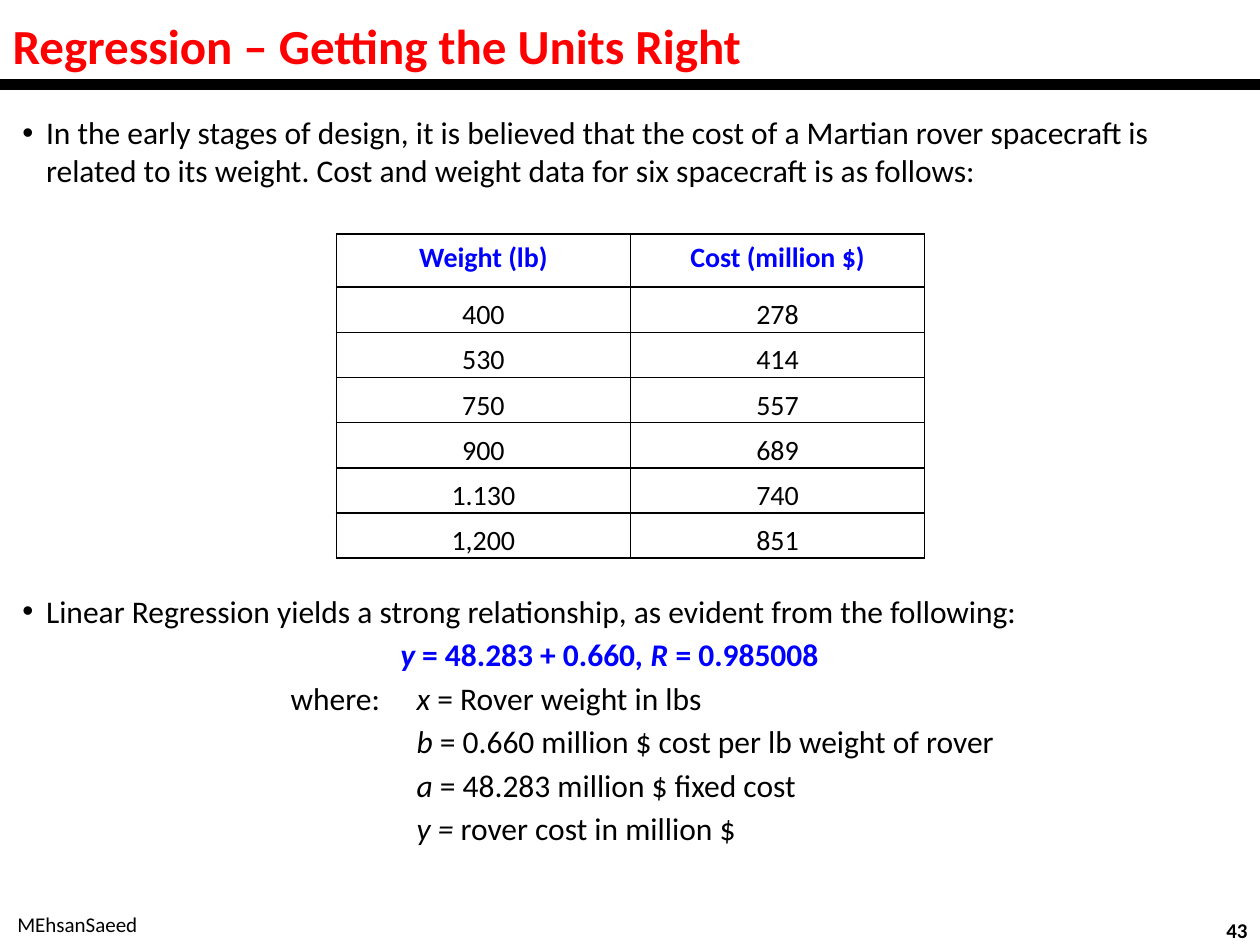
from dataclasses import dataclass

import pptx
import pptx.dml.color
import pptx.enum.shapes
import pptx.enum.text
import pptx.oxml.ns
import pptx.util
from lxml import etree
from pptx.util import Cm, Pt

ALIGN = pptx.enum.text.PP_ALIGN
ANCHOR = pptx.enum.text.MSO_ANCHOR


@dataclass(frozen=True)
class Theme:
    font: str = "Calibri"
    red: str = "FF0000"
    blue: str = "0000FF"
    black: str = "000000"
    title_size: int = 28
    body_size: int = 18
    table_size: int = 16
    footer_size: int = 12
    paragraph_gap: float = 3.2


THEME = Theme()

TABLE_ROWS = [
    ("Weight (lb)", "Cost (million $)"),
    ("400", "278"),
    ("530", "414"),
    ("750", "557"),
    ("900", "689"),
    ("1.130", "740"),
    ("1,200", "851"),
]

# Each definition is its lead-in, its symbol in italics and its meaning.
DEFINITIONS = [
    ("where:\t", "x ", "= Rover weight in lbs"),
    ("", "b", " = 0.660 million $ cost per lb weight of rover"),
    ("", "a ", "= 48.283 million $ fixed cost"),
    ("", "y = ", "rover cost in million $"),
]


def rgb(color):
    return pptx.dml.color.RGBColor.from_string(color)


def add_run(paragraph, text, size, color=THEME.black, bold=False, italic=False):
    run = paragraph.add_run()
    run.text = text
    run.font.name = THEME.font
    run.font.size = Pt(size)
    run.font.bold = bold
    run.font.italic = italic
    run.font.color.rgb = rgb(color)


def add_xml(parent, tag, **attributes):
    return etree.SubElement(parent, pptx.oxml.ns.qn(tag), attributes)


def indent_paragraph(paragraph, margin, first_line=0, bullet=None):
    """Set the left margin and first-line offset, and an optional bullet."""
    paragraph.space_before = Pt(THEME.paragraph_gap)
    properties = paragraph._p.get_or_add_pPr()
    properties.set("marL", str(int(margin)))
    properties.set("indent", str(int(first_line)))
    if bullet:
        add_xml(properties, "a:buFont", typeface="Arial")
        add_xml(properties, "a:buChar", char=bullet)


def add_text_box(slide, left, top, width, height, anchor=ANCHOR.TOP):
    frame = slide.shapes.add_textbox(left, top, width, height).text_frame
    frame.word_wrap = True
    frame.vertical_anchor = anchor
    return frame


def add_bullet(paragraph, text):
    indent_paragraph(paragraph, Cm(0.48), -Cm(0.48), "•")
    add_run(paragraph, text, THEME.body_size)


def format_title(slide, text):
    title = slide.shapes.title
    title.left, title.top, title.width, title.height = 0, 0, Cm(22.86), Cm(1.8)
    frame = title.text_frame
    frame.auto_size = pptx.enum.text.MSO_AUTO_SIZE.NONE
    frame.vertical_anchor = ANCHOR.MIDDLE
    paragraph = frame.paragraphs[0]
    paragraph.alignment = ALIGN.LEFT
    add_run(paragraph, text, THEME.title_size, THEME.red, bold=True)


def add_title_rule(slide):
    rule = slide.shapes.add_connector(
        pptx.enum.shapes.MSO_CONNECTOR.STRAIGHT, Cm(-0.05), Cm(1.7), Cm(25.4), Cm(1.7))
    rule.line.color.rgb = rgb(THEME.black)
    rule.line.width = Pt(6)
    add_xml(rule._element.spPr, "a:effectLst")


def add_cell_borders(cell):
    properties = cell._tc.get_or_add_tcPr()
    for side in ("a:lnL", "a:lnR", "a:lnT", "a:lnB"):
        border = add_xml(properties, side, w=str(int(Pt(1))))
        add_xml(add_xml(border, "a:solidFill"), "a:srgbClr", val=THEME.black)


def format_cell(cell, text, is_header):
    add_cell_borders(cell)
    cell.fill.background()
    if not is_header:
        cell.vertical_anchor = ANCHOR.BOTTOM
        cell.margin_left = cell.margin_right = cell.margin_top = Cm(0.03)
        cell.margin_bottom = 0
    paragraph = cell.text_frame.paragraphs[0]
    paragraph.alignment = ALIGN.CENTER
    color = THEME.blue if is_header else THEME.black
    add_run(paragraph, text, THEME.table_size, color, bold=is_header)


def add_data_table(slide):
    header_height, row_height, column_width = Cm(1.07), Cm(0.91), Cm(5.93)
    row_count, column_count = len(TABLE_ROWS), len(TABLE_ROWS[0])
    table = slide.shapes.add_table(
        row_count, column_count, Cm(6.78), Cm(4.72), column_width * column_count,
        header_height + row_height * (row_count - 1)).table
    table.first_row = table.horz_banding = False
    for column in table.columns:
        column.width = column_width
    for row_index, values in enumerate(TABLE_ROWS):
        is_header = row_index == 0
        table.rows[row_index].height = header_height if is_header else row_height
        for column_index, text in enumerate(values):
            format_cell(table.cell(row_index, column_index), text, is_header)


def add_regression_result(slide):
    frame = add_text_box(slide, Cm(0.2), Cm(11.81), Cm(24.97), Cm(5.4))
    add_bullet(frame.paragraphs[0],
               "Linear Regression yields a strong relationship, as evident from the following:")

    equation = frame.add_paragraph()
    indent_paragraph(equation, Cm(7.62))
    for text, italic in (("y ", True), ("= 48.283 + 0.660", False),
                         (", R ", True), ("= 0.985008", False)):
        add_run(equation, text, THEME.body_size, THEME.blue, bold=True, italic=italic)

    for lead_in, symbol, meaning in DEFINITIONS:
        paragraph = frame.add_paragraph()
        indent_paragraph(paragraph, Cm(7.95), -Cm(2.54) if lead_in else 0)
        if lead_in:
            add_run(paragraph, lead_in, THEME.body_size)
        add_run(paragraph, symbol, THEME.body_size, italic=True)
        add_run(paragraph, meaning, THEME.body_size)


def add_footer(slide, text, left, top, width, alignment, bold=False):
    frame = add_text_box(slide, left, top, width, Cm(1.02), ANCHOR.MIDDLE)
    paragraph = frame.paragraphs[0]
    paragraph.alignment = alignment
    add_run(paragraph, text, THEME.footer_size, bold=bold)


def main():
    presentation = pptx.Presentation()
    presentation.slide_width, presentation.slide_height = Cm(25.4), Cm(19.05)
    slide = presentation.slides.add_slide(presentation.slide_layouts[5])

    format_title(slide, "Regression – Getting the Units Right")
    add_title_rule(slide)
    introduction = add_text_box(slide, Cm(0.2), Cm(2.16), Cm(24.97), Cm(2.1))
    add_bullet(introduction.paragraphs[0],
               "In the early stages of design, it is believed that the cost of a Martian rover "
               "spacecraft is related to its weight. Cost and weight data for six spacecraft "
               "is as follows:")
    add_data_table(slide)
    add_regression_result(slide)
    add_footer(slide, "MEhsanSaeed", Cm(-0.03), Cm(18.11), Cm(3.18), ALIGN.CENTER)
    add_footer(slide, "43", Cm(19.48), Cm(18.24), Cm(5.92), ALIGN.RIGHT, bold=True)

    presentation.save("out.pptx")


if __name__ == "__main__":
    main()
